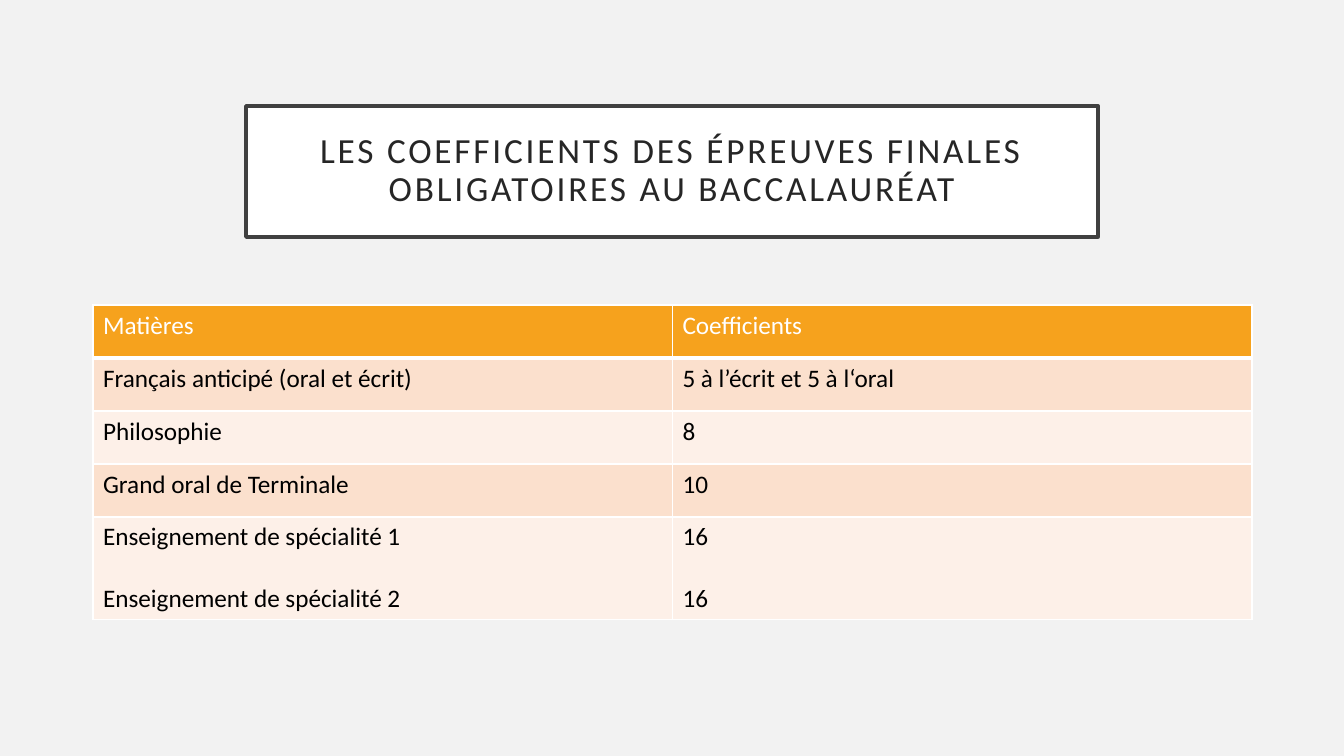
import dataclasses
import typing

import pptx
import pptx.dml.color
import pptx.enum.text
import pptx.oxml
import pptx.oxml.ns
import pptx.util

EMU_PER_PX = 914400 / 100.8
TITLE_ONLY = 5


@dataclasses.dataclass(frozen=True)
class Theme:
    font: str = "Calibri"
    page: str = "F2F2F2"
    white: str = "FFFFFF"
    frame: str = "404040"
    title_ink: str = "262626"
    body_ink: str = "000000"
    header: str = "F6A21D"
    bands: tuple[str, str] = ("FBE0CD", "FDF0E8")
    title_size: float = 25.2
    body_size: float = 18
    paragraph_gap: float = 22
    title_tracking: int = 200


@dataclasses.dataclass(frozen=True)
class Box:
    left: int
    top: int
    width: int
    height: int


@dataclasses.dataclass(frozen=True)
class Row:
    subjects: tuple[str, ...]
    coefficients: tuple[str, ...]
    height: int = 53


THEME = Theme()
PAGE = Box(0, 0, 1344, 756)
TITLE_BOX = Box(246, 106, 852, 131)
TABLE_BOX = Box(93, 305, 1159, 314)
TITLE = "LES COEFFICIENTS DES ÉPREUVES FINALES OBLIGATOIRES AU BACCALAURÉAT"
ROWS = [
    Row(("Matières",), ("Coefficients",)),
    Row(("Français anticipé (oral et écrit)",), ("5 à l’écrit et 5 à l‘oral",)),
    Row(("Philosophie",), ("8",)),
    Row(("Grand oral de Terminale",), ("10",)),
    Row(
        ("Enseignement de spécialité 1", "Enseignement de spécialité 2"),
        ("16", "16"),
        102,
    ),
]


def px(length: int) -> int:
    return round(length * EMU_PER_PX)


def rgb(color: str) -> pptx.dml.color.RGBColor:
    return pptx.dml.color.RGBColor.from_string(color)


def apply(target: typing.Any, values: dict[str, typing.Any]) -> None:
    for name, value in values.items():
        setattr(target, name, value)


def paint(fill: typing.Any, color: str) -> None:
    fill.solid()
    fill.fore_color.rgb = rgb(color)


def write(para: typing.Any, text: str, size: float, color: str) -> typing.Any:
    span = para.add_run()
    span.text = text
    apply(
        span.font,
        {"name": THEME.font, "size": pptx.util.Pt(size), "bold": False},
    )
    span.font.color.rgb = rgb(color)
    return span


def draw_title(page: typing.Any) -> None:
    title = page.shapes.title
    apply(title, {name: px(value) for name, value in dataclasses.asdict(TITLE_BOX).items()})
    paint(title.fill, THEME.white)
    paint(title.line.fill, THEME.frame)
    title.line.width = pptx.util.Pt(2.5)
    frame = title.text_frame
    margins = ("margin_left", "margin_top", "margin_right", "margin_bottom")
    apply(frame, dict.fromkeys(margins, px(20)))
    apply(
        frame,
        {
            "word_wrap": True,
            "auto_size": pptx.enum.text.MSO_AUTO_SIZE.NONE,
            "vertical_anchor": pptx.enum.text.MSO_ANCHOR.MIDDLE,
        },
    )
    para = frame.paragraphs[0]
    apply(para, {"alignment": pptx.enum.text.PP_ALIGN.CENTER, "line_spacing": 0.9})
    span = write(para, TITLE, THEME.title_size, THEME.title_ink)
    span.font._element.set("spc", str(THEME.title_tracking))


def draw_borders(cell: typing.Any, bottom_width: float) -> None:
    properties = cell._tc.get_or_add_tcPr()
    widths = {"lnL": 1, "lnR": 1, "lnT": 1, "lnB": bottom_width}
    for side, width in widths.items():
        properties.append(
            pptx.oxml.parse_xml(
                f'<a:{side} {pptx.oxml.ns.nsdecls("a")} w="{pptx.util.Pt(width)}">'
                f'<a:solidFill><a:srgbClr val="{THEME.white}"/></a:solidFill>'
                f"</a:{side}>"
            )
        )


def fill_cell(cell: typing.Any, lines: tuple[str, ...], row_index: int) -> None:
    is_header = row_index == 0
    draw_borders(cell, 3 if is_header else 1)
    paint(cell.fill, THEME.header if is_header else THEME.bands[(row_index - 1) % 2])
    ink = THEME.white if is_header else THEME.body_ink
    frame = cell.text_frame
    for index, line in enumerate(lines):
        para = frame.add_paragraph() if index else frame.paragraphs[0]
        if index:
            para.space_before = pptx.util.Pt(THEME.paragraph_gap)
        write(para, line, THEME.body_size, ink)


def draw_table(page: typing.Any) -> None:
    bounds = [px(value) for value in dataclasses.astuple(TABLE_BOX)]
    table = page.shapes.add_table(len(ROWS), 2, *bounds).table
    for row_index, row in enumerate(ROWS):
        table.rows[row_index].height = px(row.height)
        for column, lines in enumerate((row.subjects, row.coefficients)):
            fill_cell(table.cell(row_index, column), lines, row_index)


def main() -> None:
    deck = pptx.Presentation()
    apply(deck, {"slide_width": px(PAGE.width), "slide_height": px(PAGE.height)})
    page = deck.slides.add_slide(deck.slide_layouts[TITLE_ONLY])
    paint(page.background.fill, THEME.page)
    draw_title(page)
    draw_table(page)
    deck.save("out.pptx")


if __name__ == "__main__":
    main()
